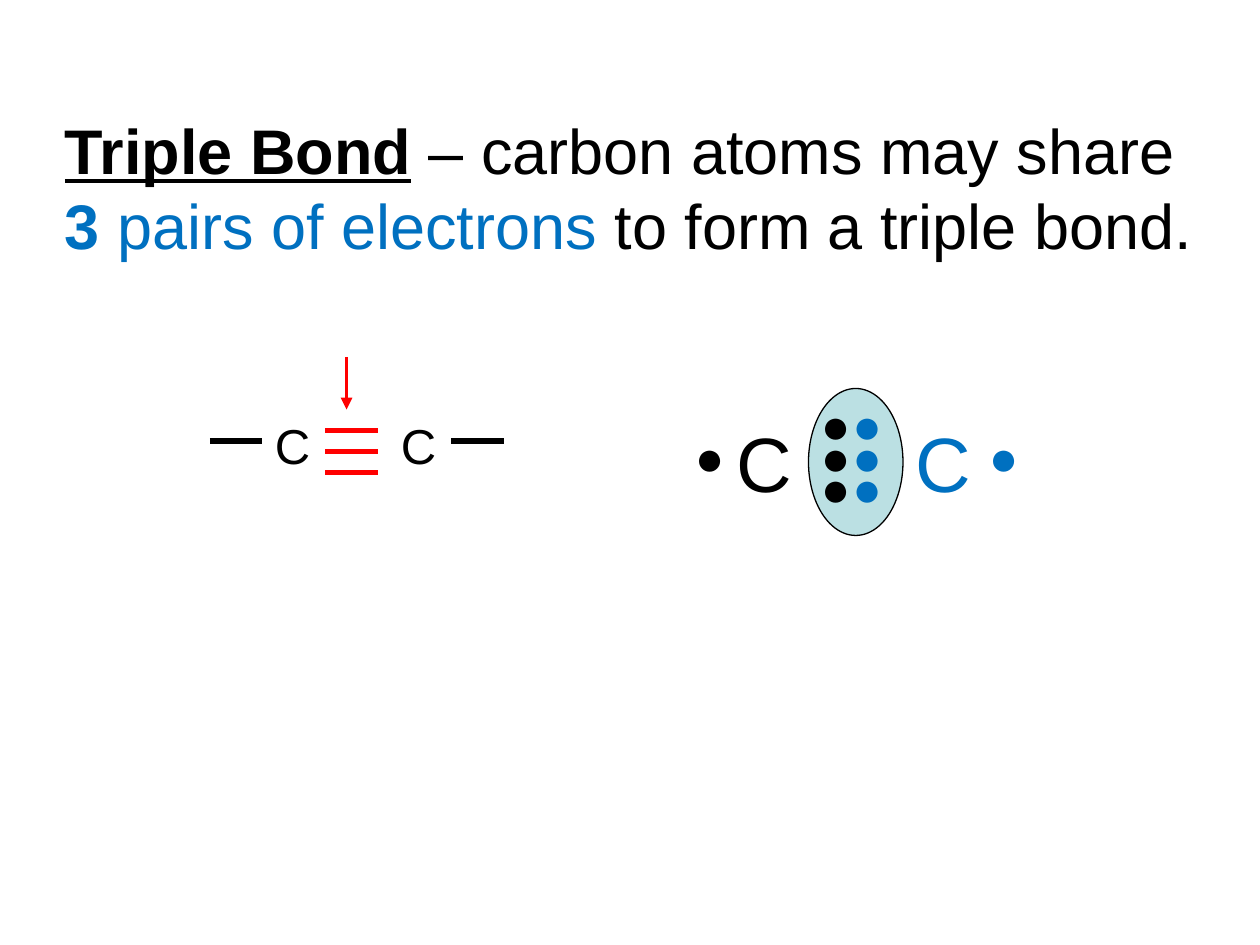
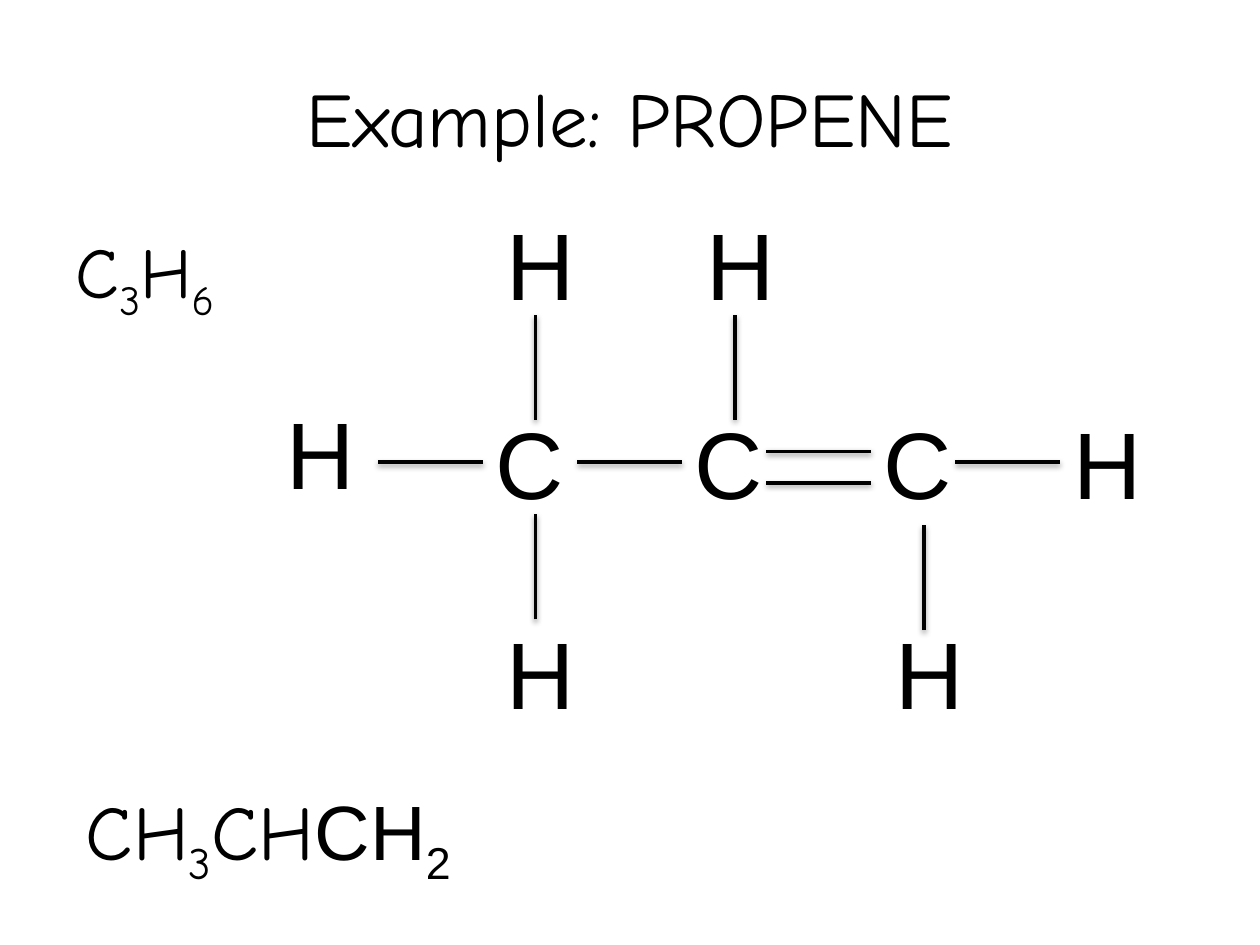
from lxml import etree
from pptx import Presentation
from pptx.dml.color import RGBColor
from pptx.enum import shapes, text
from pptx.oxml import ns
from pptx.util import Pt

PX = 7620  # EMU per px, 120 px to the inch


class Theme:
    black, blue, red, pale = "000000", "0070C0", "FF0000", "BBE0E3"
    sans, hand = "Arial", "Comic Neue"
    lead, head, formula = 36, 44, 40.7
    small, big, atom = 28, 44, 54
    thin, bond, arrow, thick = 0.75, 2, 2.25, 3


T = Theme
LEFT, MID = text.PP_ALIGN.LEFT, text.PP_ALIGN.CENTER
SUB = {"sub": True}

# Slide 1: triple bond
LEAD = [
    ("Triple Bond", {"bold": True, "line": True}),
    (" – carbon atoms may share\n", {}),
    ("3 ", {"color": T.blue, "bold": True}),
    ("pairs of electrons ", {"color": T.blue}),
    ("to form a triple bond.", {}),
]
OVAL = (770, 370, 90, 140)
CARBONS = [(250, 50, 68, T.small, T.black), (370, 50, 68, T.small, T.black),
           (690, 80, 100, T.big, T.black), (860, 80, 100, T.big, T.blue)]
PAIRS = [(770, T.black), (800, T.blue)]
ROWS = [370, 400, 430]
OUTER = [(650, T.black), (930, T.blue)]
STROKES = [(310, y, T.red) for y in (410, 430, 450)]
STROKES += [(x, 420, T.black) for x in (200, 430)]

# Slide 2: propene
TITLE = [("Example: PROPENE", {})]
FORMULA = [("C", {}), ("3", SUB), ("H", {}), ("6", SUB)]
SHORT = [("CH", {}), ("3", SUB), ("CH", {}), ("CH", {"name": T.sans}),
         ("2", {"name": T.sans, "sub": True})]
ATOMS = {
    "C1": (460, 380), "C2": (650, 380), "C3": (830, 380),
    "H1": (450, 190), "H2": (640, 190), "H3": (240, 370),
    "H4": (990, 380), "H5": (450, 580), "H6": (820, 580),
}
SPAN = 100
ACROSS = [(360, 440, "C1"), (550, 440, "C2"), (910, 440, None),
          (730, 430, None), (730, 460, None)]
DOWN = [(510, 300), (700, 300), (510, 490), (880, 500)]


def rgb(code):
    return RGBColor.from_string(code)


def put(shape, box):
    shape.left, shape.top, shape.width, shape.height = (n * PX for n in box)


def write(where, runs, box, size, name=T.sans, color=T.black, align=LEFT,
          anchor=text.MSO_ANCHOR.TOP, grow=True, hang=0):
    """Fill a placeholder, or a new text box on a slide, with styled runs."""
    shape = where
    if not hasattr(where, "text_frame"):
        shape = where.shapes.add_textbox(0, 0, 0, 0)
    put(shape, box)
    frame = shape.text_frame
    frame.word_wrap = True
    frame.vertical_anchor = anchor
    kind = text.MSO_AUTO_SIZE
    frame.auto_size = kind.SHAPE_TO_FIT_TEXT if grow else kind.NONE
    para = frame.paragraphs[0]
    para.alignment = align
    para.space_before = Pt(0)
    if hang:
        props = para._p.get_or_add_pPr()
        props.set("marL", str(hang * PX))
        props.set("indent", str(-hang * PX))
        etree.SubElement(props, ns.qn("a:buNone"))
    for words, look in runs:
        run = para.add_run()
        run.text = words.rstrip("\n")
        font = run.font
        font.size, font.name = Pt(size), look.get("name", name)
        font.bold = look.get("bold", False)
        font.underline = look.get("line", False)
        font.color.rgb = rgb(look.get("color", color))
        if look.get("sub"):
            run._r.get_or_add_rPr().set("baseline", "-25000")
        if words.endswith("\n"):
            para.add_line_break()
    return shape


def line(slide, start, end, color, width, tip=False, shade=False):
    ends = [n * PX for n in (*start, *end)]
    link = slide.shapes.add_connector(shapes.MSO_CONNECTOR.STRAIGHT, *ends)
    link.line.color.rgb = rgb(color)
    link.line.width = Pt(width)
    if tip:
        etree.SubElement(link.line._get_or_add_ln(), ns.qn("a:tailEnd"), type="triangle")
    fx = etree.SubElement(link._element.spPr, ns.qn("a:effectLst"))
    if shade:
        glow = etree.SubElement(fx, ns.qn("a:outerShdw"), blurRad="40000",
                                dist="20000", dir="5400000", rotWithShape="0")
        tone = etree.SubElement(glow, ns.qn("a:srgbClr"), val=T.black)
        etree.SubElement(tone, ns.qn("a:alpha"), val="38000")
    return link


def triple(deck):
    slide = deck.slides.add_slide(deck.slide_layouts[6])
    # Shared electrons
    oval = slide.shapes.add_shape(shapes.MSO_SHAPE.OVAL, *(n * PX for n in OVAL))
    oval.shadow.inherit = False
    oval.fill.solid()
    oval.fill.fore_color.rgb = rgb(T.pale)
    oval.line.color.rgb = rgb(T.black)
    oval.line.width = Pt(T.thin)
    dots = [(x, y, color) for x, color in PAIRS for y in ROWS]
    dots += [(x, ROWS[1], color) for x, color in OUTER]
    for x, y, color in dots:
        write(slide, [("●", {})], (x, y, 40, 68), T.small, color=color)
    # Definition and carbon letters
    write(slide, LEAD, (50, 100, 1150, 156), T.lead)
    for x, wide, high, size, color in CARBONS:
        write(slide, [("C", {})], (x, 390, wide, high), size, color=color)
    # Bond strokes and the arrow to them
    for x, y, color in STROKES:
        line(slide, (x, y), (x + 50, y), color, T.thick)
    line(slide, (330, 340), (330, 390), T.red, T.arrow, tip=True)


def propene(deck):
    slide = deck.slides.add_slide(deck.slide_layouts[1])
    # Title and formulas
    write(slide.shapes.title, TITLE, (60, 36, 1080, 150), T.head, name=T.hand,
          align=MID, anchor=text.MSO_ANCHOR.MIDDLE, grow=False)
    write(slide.placeholders[1], FORMULA, (60, 210, 240, 90), T.formula,
          name=T.hand, grow=False, hang=45)
    write(slide, SHORT, (70, 740, 1080, 90), T.head, name=T.hand,
          grow=False, hang=45)
    # Atoms
    made = {}
    for key, (x, y) in ATOMS.items():
        wide, align = (120, LEFT) if key[0] == "C" else (130, MID)
        made[key] = write(slide, [(key[0], {})], (x, y, wide, 120), T.atom, align=align)
    # Bonds
    for x, y, atom in ACROSS:
        link = line(slide, (x, y), (x + SPAN, y), T.black, T.bond, shade=True)
        if atom:
            link.end_connect(made[atom], 1)
    for x, y in DOWN:
        line(slide, (x, y + SPAN), (x, y), T.black, T.bond, shade=True)


def main():
    deck = Presentation()
    deck.slide_width, deck.slide_height = 1200 * PX, 900 * PX
    triple(deck)
    propene(deck)
    deck.save("out.pptx")


if __name__ == "__main__":
    main()
